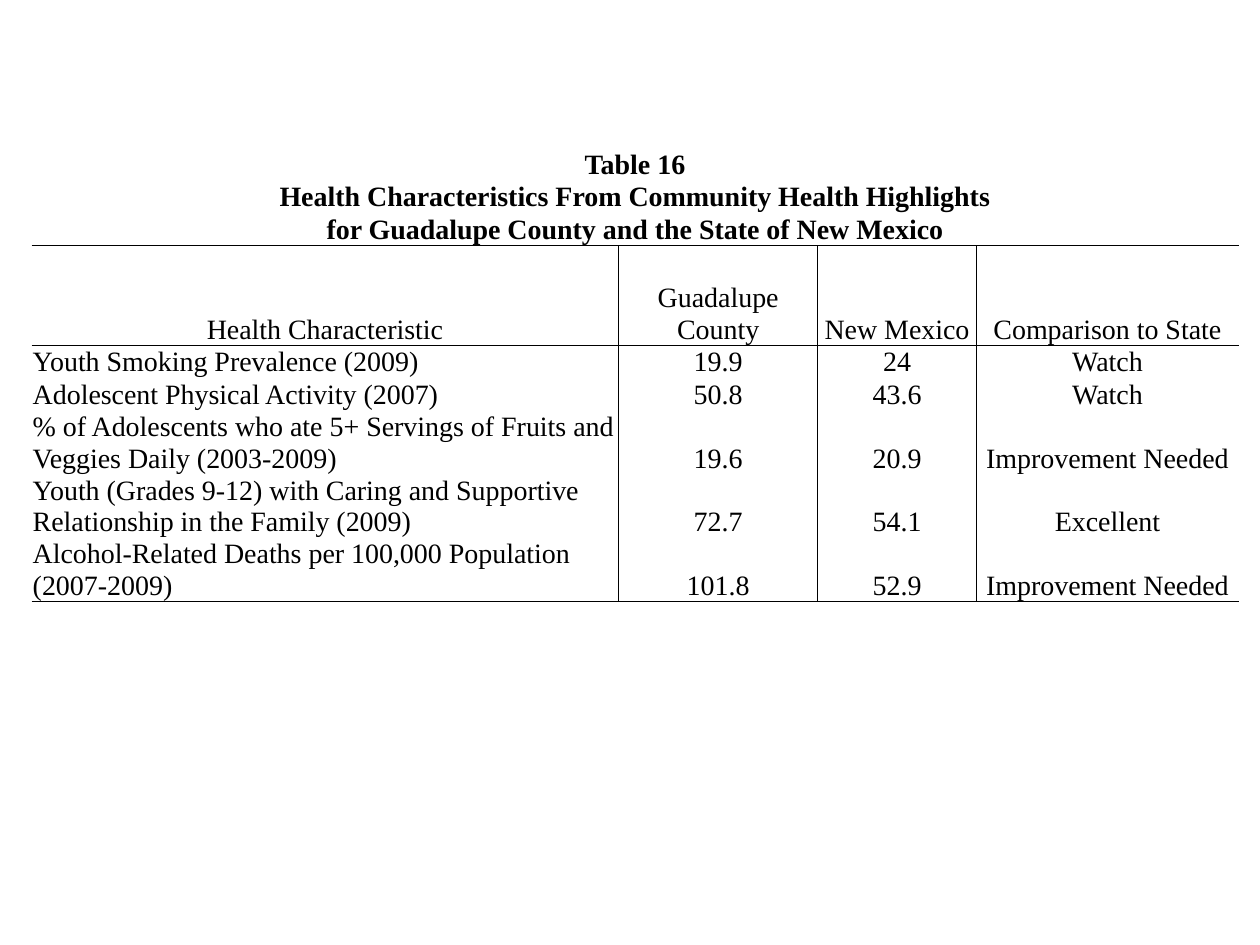
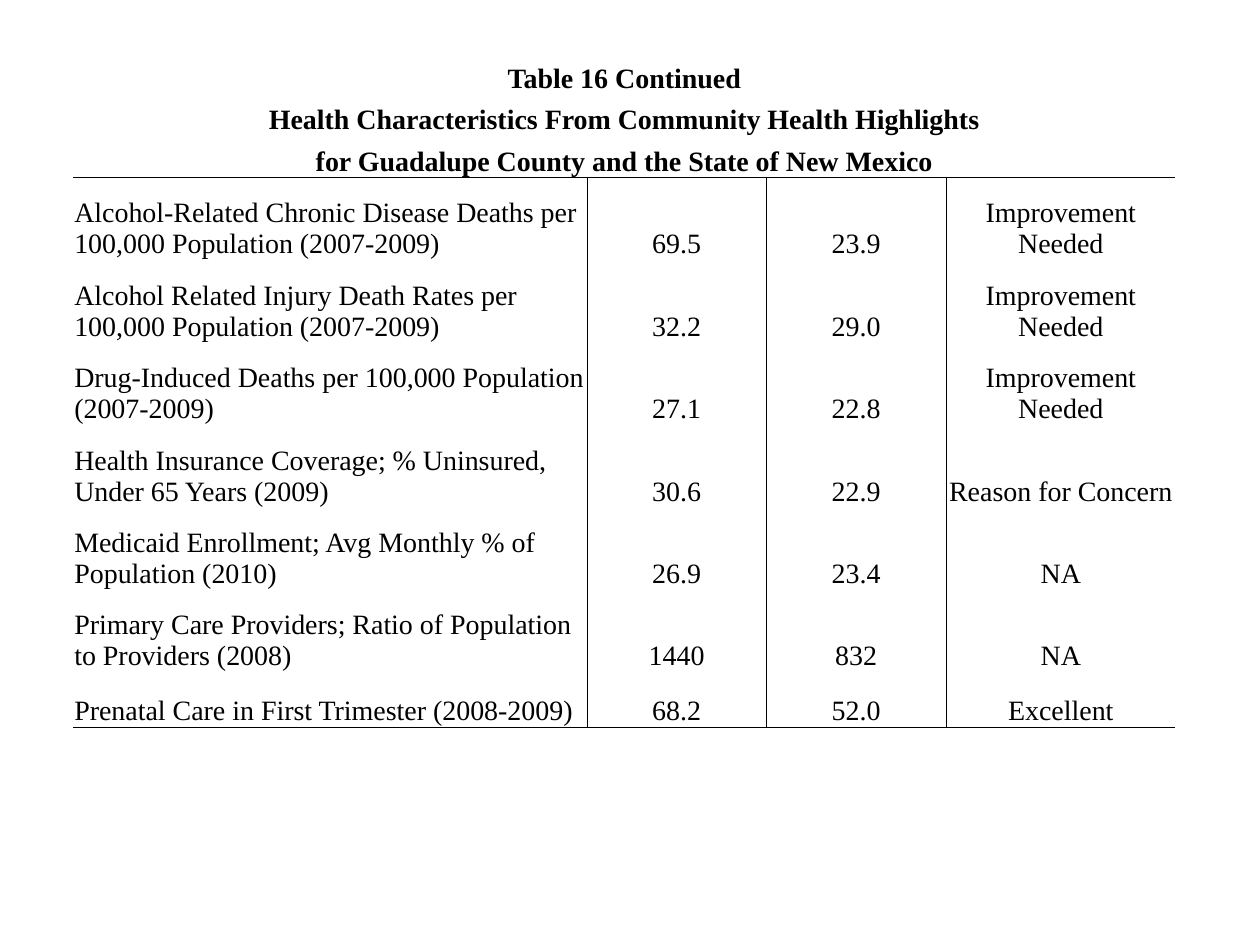
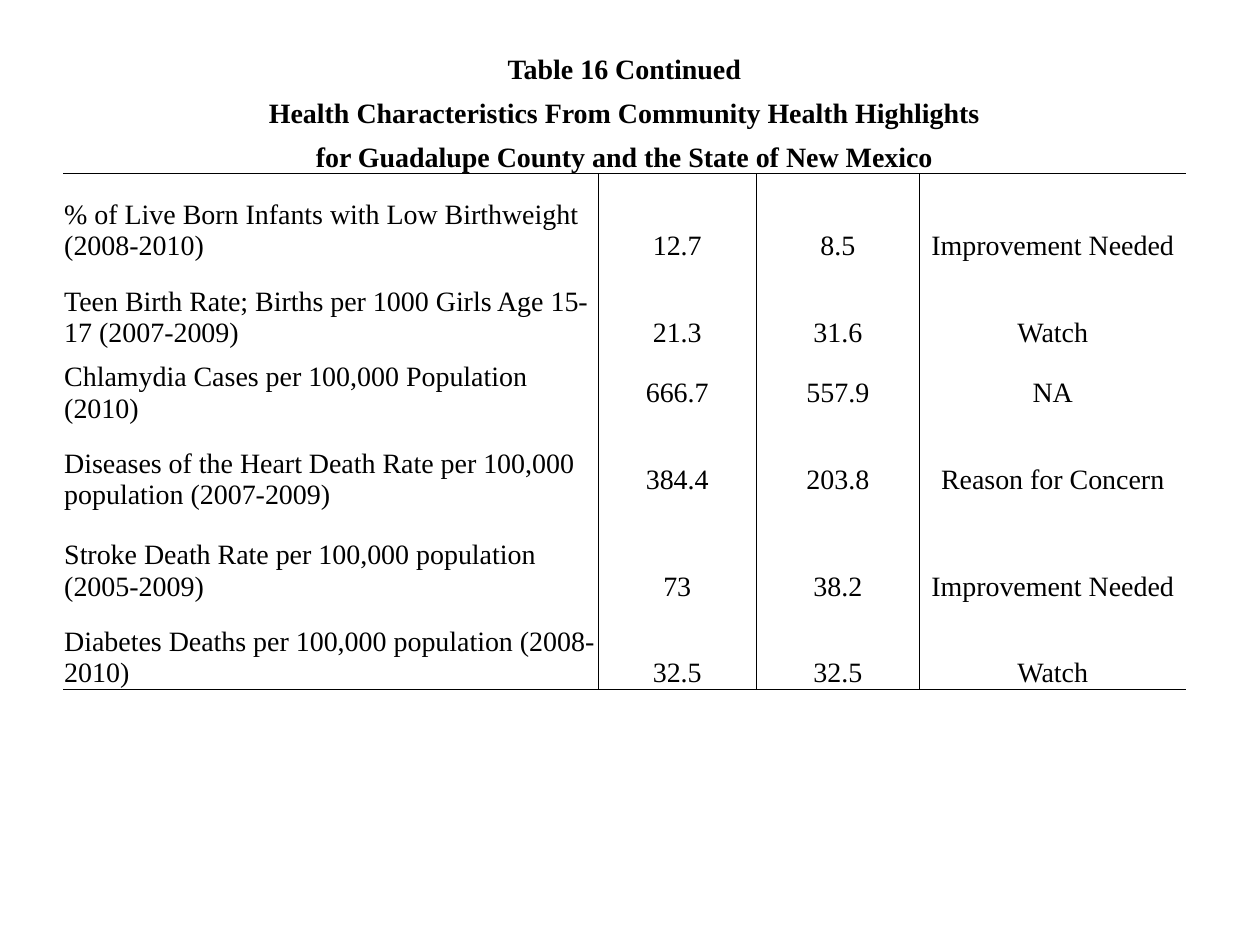
from dataclasses import dataclass

from lxml.etree import SubElement
from pptx import Presentation
from pptx.dml.color import RGBColor
from pptx.enum.text import MSO_ANCHOR, PP_ALIGN
from pptx.oxml.ns import qn
from pptx.util import Inches, Pt


@dataclass(frozen=True)
class Theme:
    font: str = "Times New Roman"
    size: int = 16
    ink: str = "000000"
    rule_width: float = 0.5
    inset: float = 0.01


THEME = Theme()

# Content
SUBJECT = [
    "Health Characteristics From Community Health Highlights",
    "for Guadalupe County and the State of New Mexico",
]
COLUMN_HEADS = ("Health Characteristic", "Guadalupe County", "New Mexico", "Comparison to State")

PAGES = [
    {
        "caption": "Table 16",
        "heads": [COLUMN_HEADS],
        "measures": [
            ("Youth Smoking Prevalence (2009)", "19.9", "24", "Watch"),
            ("Adolescent Physical Activity (2007)", "50.8", "43.6", "Watch"),
            ("% of Adolescents who ate 5+ Servings of Fruits and Veggies Daily (2003-2009)",
             "19.6", "20.9", "Improvement Needed"),
            ("Youth (Grades 9-12) with Caring and Supportive Relationship in the Family (2009)",
             "72.7", "54.1", "Excellent"),
            ("Alcohol-Related Deaths per 100,000 Population (2007-2009)",
             "101.8", "52.9", "Improvement Needed"),
        ],
        "corner": (0.25, 1.17),
        "widths": [4.66, 1.58, 1.26, 2.08],
        "heights": [0.26] * 3 + [0.79] + [0.26] * 2 + [0.5] * 3 + [0.45],
    },
    {
        "caption": "Table 16 Continued",
        "heads": [],
        "measures": [
            ("Alcohol-Related Chronic Disease Deaths per 100,000 Population (2007-2009)",
             "69.5", "23.9", "Improvement Needed"),
            ("Alcohol Related Injury Death Rates per 100,000 Population (2007-2009)",
             "32.2", "29.0", "Improvement Needed"),
            ("Drug-Induced Deaths per 100,000 Population (2007-2009)",
             "27.1", "22.8", "Improvement Needed"),
            ("Health Insurance Coverage; % Uninsured, Under 65 Years (2009)",
             "30.6", "22.9", "Reason for Concern"),
            ("Medicaid Enrollment; Avg Monthly % of Population (2010)", "26.9", "23.4", "NA"),
            ("Primary Care Providers; Ratio of Population to Providers (2008)",
             "1440", "832", "NA"),
            ("Prenatal Care in First Trimester (2008-2009)", "68.2", "52.0", "Excellent"),
        ],
        "corner": (0.58, 0.42),
        "widths": [4.08, 1.42, 1.43, 1.82],
        "heights": [0.33] * 3 + [0.65, 0.66] * 2 + [0.65] * 2 + [0.44, 0.33],
    },
    {
        "caption": "Table 16 Continued",
        "heads": [],
        "measures": [
            ("% of Live Born Infants with Low Birthweight (2008-2010)",
             "12.7", "8.5", "Improvement Needed"),
            ("Teen Birth Rate; Births per 1000 Girls Age 15-17 (2007-2009)",
             "21.3", "31.6", "Watch"),
            ("Chlamydia Cases per 100,000 Population (2010)", "666.7", "557.9", "NA"),
            ("Diseases of the Heart Death Rate per 100,000 population (2007-2009)",
             "384.4", "203.8", "Reason for Concern"),
            ("Stroke Death Rate per 100,000 population (2005-2009)",
             "73", "38.2", "Improvement Needed"),
            ("Diabetes Deaths per 100,000 population (2008-2010)", "32.5", "32.5", "Watch"),
        ],
        "centred_measures": {2, 3},
        "corner": (0.5, 0.33),
        "widths": [4.25, 1.25, 1.3, 2.11],
        "heights": [0.35] * 3 + [0.7] + [0.69] * 3 + [0.63, 0.69, 0.35],
    },
]


def rule_cell(cell, ruled_sides):
    """Draw the named sides (L, R, T, B) and clear the others."""
    properties = cell._tc.get_or_add_tcPr()
    for side in "LRTB":
        ruled = side in ruled_sides
        width = Pt(THEME.rule_width) if ruled else 0
        line = SubElement(properties, qn(f"a:ln{side}"), w=str(int(width)))
        paint = SubElement(line, qn("a:solidFill" if ruled else "a:noFill"))
        if ruled:
            SubElement(paint, qn("a:srgbClr"), val=THEME.ink)
    cell.fill.background()


def write_cell(cell, words, align, anchor, bold=False):
    cell.vertical_anchor = anchor
    paragraph = cell.text_frame.paragraphs[0]
    paragraph.alignment = align
    run = paragraph.add_run()
    run.text = words
    run.font.name = THEME.font
    run.font.size = Pt(THEME.size)
    run.font.bold = bold
    run.font.color.rgb = RGBColor.from_string(THEME.ink)


def add_health_table(slide, page):
    captions = [page["caption"], *SUBJECT]
    body = page["heads"] + page["measures"]
    first_body = len(captions)
    first_measure = first_body + len(page["heads"])
    closing = first_body + len(body)
    widths, heights = page["widths"], page["heights"]
    left, top = page["corner"]
    table = slide.shapes.add_table(
        len(heights), len(widths), Inches(left), Inches(top),
        Inches(sum(widths)), Inches(sum(heights))).table
    table.first_row = table.horz_banding = False
    for column, width in zip(table.columns, widths):
        column.width = Inches(width)
    for row, height in zip(table.rows, heights):
        row.height = Inches(height)

    # Rules: under captions, heads and last measure, and between body columns
    ruled_tops = {first_body, first_measure, closing}
    for r in range(len(heights)):
        in_body = first_body <= r < closing
        for c in range(len(widths)):
            cell = table.cell(r, c)
            cell.margin_left = cell.margin_right = cell.margin_top = Inches(THEME.inset)
            cell.margin_bottom = 0
            sides = {"T": r in ruled_tops, "B": r + 1 in ruled_tops,
                     "L": in_body and c > 0, "R": in_body and c < len(widths) - 1}
            rule_cell(cell, {side for side, ruled in sides.items() if ruled})

    # Captions across the full width
    for r, caption in enumerate(captions):
        table.cell(r, 0).merge(table.cell(r, len(widths) - 1))
        write_cell(table.cell(r, 0), caption, PP_ALIGN.CENTER, MSO_ANCHOR.BOTTOM, bold=True)

    # Heads and measures
    for r, entries in enumerate(body, first_body):
        centred = r - first_measure in page.get("centred_measures", ())
        anchor = MSO_ANCHOR.MIDDLE if centred else MSO_ANCHOR.BOTTOM
        for c, words in enumerate(entries):
            is_name = c == 0 and r >= first_measure
            align = PP_ALIGN.LEFT if is_name else PP_ALIGN.CENTER
            write_cell(table.cell(r, c), words, align, anchor)


def main():
    deck = Presentation()
    deck.slide_width, deck.slide_height = Inches(10), Inches(7.5)
    blank_layout = deck.slide_layouts[6]
    for page in PAGES:
        add_health_table(deck.slides.add_slide(blank_layout), page)
    deck.save("out.pptx")


if __name__ == "__main__":
    main()
